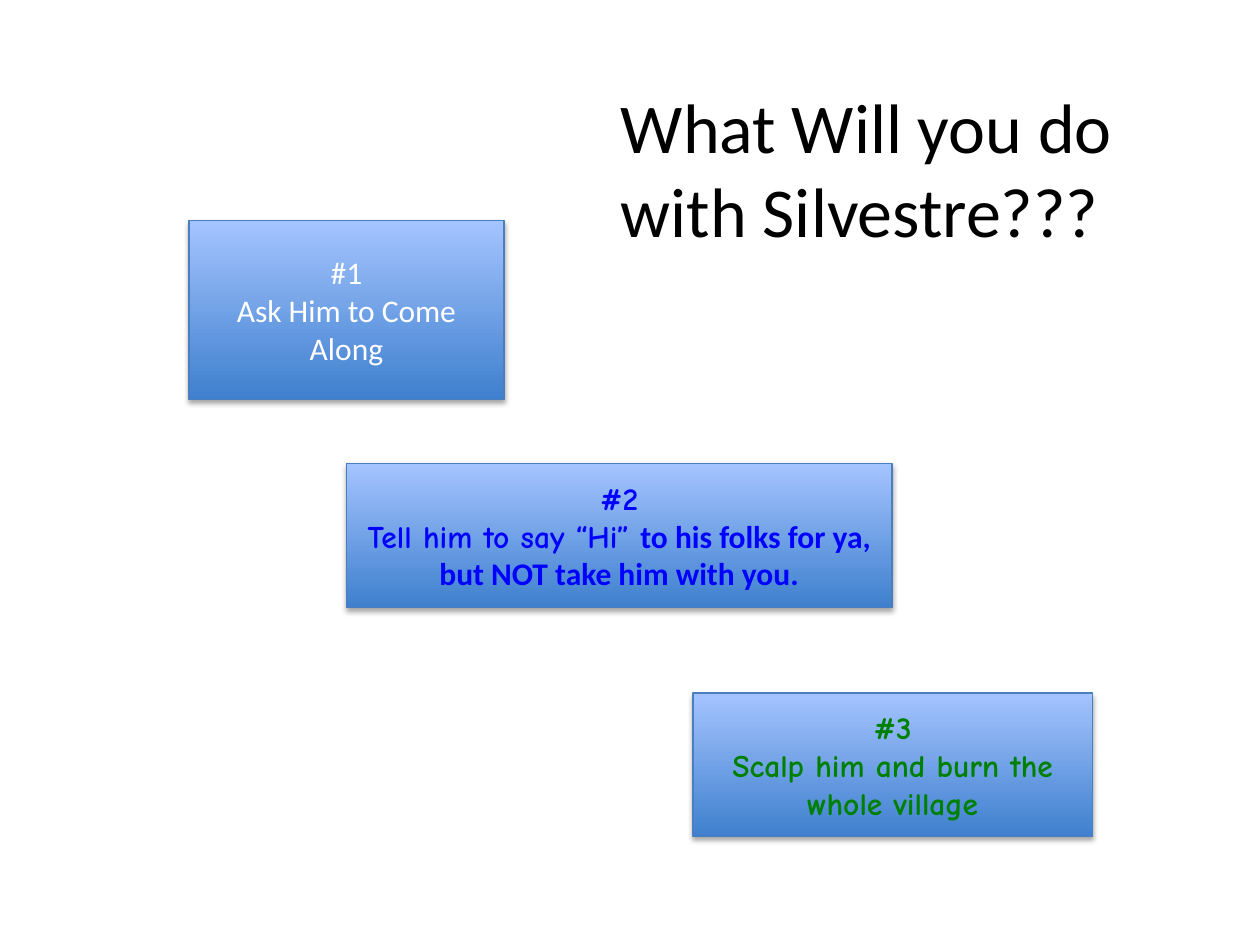
from lxml import etree
from pptx import Presentation
from pptx.dml.color import RGBColor as RGB
from pptx.enum.shapes import MSO_SHAPE as SHAPE
from pptx.enum.text import MSO_ANCHOR as ANCHOR, PP_ALIGN as ALIGN
from pptx.oxml import parse_xml
from pptx.oxml.ns import nsdecls, qn
from pptx.util import Inches, Pt

COLORS = {
    "dark": "3F80CE", "light": "A4C4FF", "edge": "4B7EBC", "black": "000000",
    "white": "FFFFFF", "blue": "0000FF", "green": "008000",
}
SANS, COMIC = "Calibri", "Comic Neue"


def rgb(name):
    return RGB.from_string(COLORS[name])


def style(run, face, size, color, bold=False):
    font = run.font
    font.name, font.size, font.bold = face, Pt(size), bold
    font.color.rgb = rgb(color)


deck = Presentation()
deck.slide_width, deck.slide_height = Inches(10), Inches(7.5)
slide = deck.slides.add_slide(deck.slide_layouts[6])

# Choice buttons: box, text colour, bold, paragraphs of (text, font) runs
choices = [
    ((1.5, 1.75, 2.5, 1.42), "white", False,
     [[("#1", SANS)], [("Ask Him to Come Along", SANS)]]),
    ((2.75, 3.68, 4.33, 1.14), "blue", True,
     [[("#2", COMIC)],
      [("Tell him to say “Hi” ", COMIC),
       ("to his folks for ya, but NOT take him with you.", SANS)]]),
    ((5.5, 5.5, 3.17, 1.14), "green", True,
     [[("#3", COMIC)], [("Scalp him and burn the whole village", COMIC)]]),
]
for box, color, bold, lines in choices:
    button = slide.shapes.add_shape(SHAPE.ACTION_BUTTON_CUSTOM, *map(Inches, box))

    # Gradient from dark at the bottom to light at the top
    button.fill.gradient()
    button.fill.gradient_angle = 90
    for stop, tone, place in zip(button.fill.gradient_stops, ("dark", "light"), (0, 1)):
        stop.color.rgb = rgb(tone)
        stop.position = place
    button.line.color.rgb = rgb("edge")
    button.line.width = Pt(0.75)

    # Soft shadow straight below
    button.shadow.inherit = False
    effects = button._element.spPr.find(qn("a:effectLst"))
    effects.append(parse_xml(
        f'<a:outerShdw {nsdecls("a")} blurRad="{Pt(3.1)}" dist="{Pt(1.8)}" '
        'dir="5400000" rotWithShape="0"/>'))
    tint = etree.SubElement(effects[0], qn("a:srgbClr"), val=COLORS["black"])
    etree.SubElement(tint, qn("a:alpha"), val="35000")

    # Label
    frame = button.text_frame
    frame.word_wrap = True
    frame.vertical_anchor = ANCHOR.MIDDLE
    for i, line in enumerate(lines):
        para = frame.add_paragraph() if i else frame.paragraphs[0]
        para.alignment = ALIGN.CENTER
        for text, face in line:
            run = para.add_run()
            run.text = text
            style(run, face, 18, color, bold)

# Question
title = slide.shapes.add_textbox(Inches(4.83), Inches(0.61), Inches(4.51), Inches(1.45))
title.text_frame.word_wrap = True
title.text_frame.text = "What Will you do with Silvestre???"
style(title.text_frame.paragraphs[0].runs[0], SANS, 40, "black")

deck.save("out.pptx")
